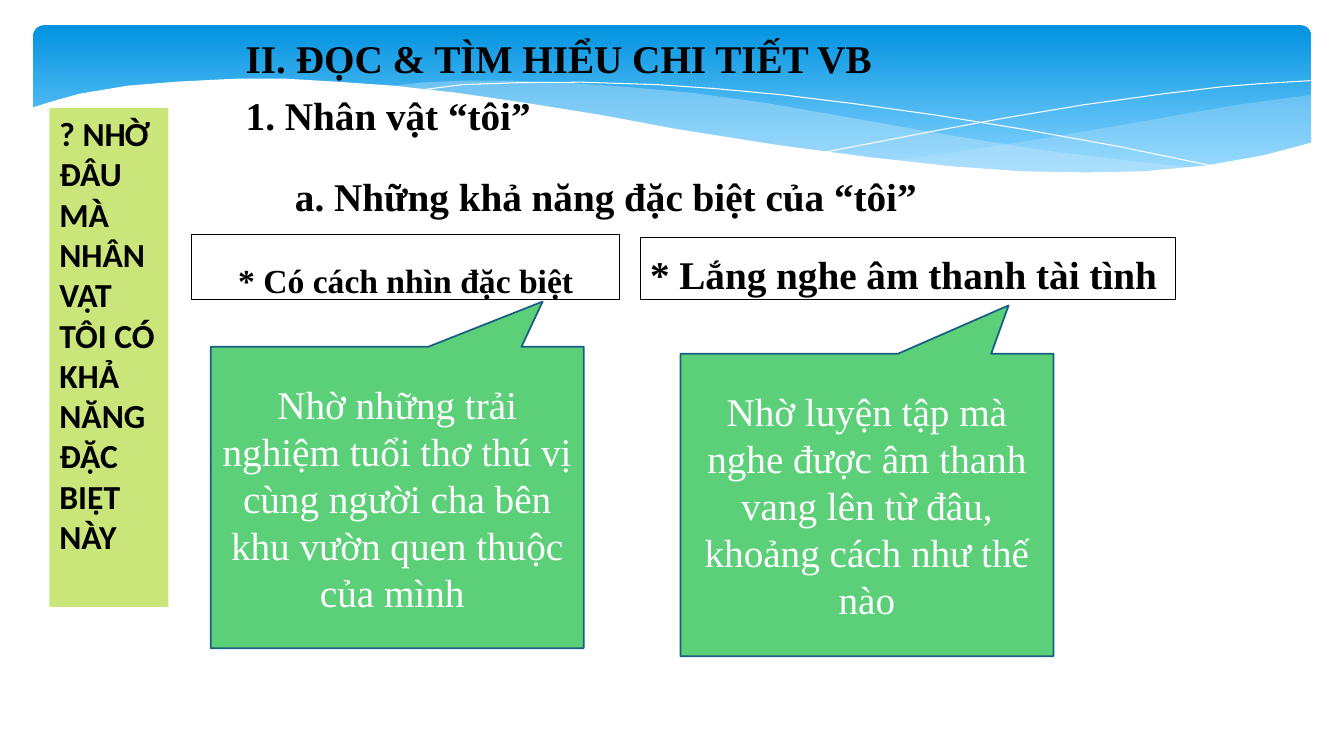
import dataclasses
import typing

import lxml.etree
import pptx
import pptx.dml.color
import pptx.enum.shapes
import pptx.enum.text
import pptx.oxml.ns
import pptx.util

SLIDE_WIDTH = pptx.util.Inches(13.333)
SLIDE_HEIGHT = pptx.util.Inches(7.5)
WHITE, BLACK = "FFFFFF", "000000"
GREEN, LIME, NAVY, PALE_BLUE = "5BD078", "CAE67B", "195F84", "C6E7FC"
SERIF = "Times New Roman"
Shapes = pptx.enum.shapes.MSO_SHAPE
Align = pptx.enum.text.PP_ALIGN
Anchor = pptx.enum.text.MSO_ANCHOR
AutoSize = pptx.enum.text.MSO_AUTO_SIZE


class Box(typing.NamedTuple):
    left: float
    top: float
    width: float
    height: float


@dataclasses.dataclass
class Wave:
    points: list[tuple[float, float]]
    fill: str | None = None
    opacity: int = 100
    line: str | None = None


@dataclasses.dataclass
class Panel:
    box: Box
    text: str
    geometry: Shapes | None = None
    adjustments: tuple[float, ...] = ()
    fill: str | None = None
    line: str | None = None
    line_width: float = 0.75
    size: int = 28
    font: str = SERIF
    colour: str = BLACK
    bold: bool = True
    align: Align = Align.LEFT
    anchor: Anchor = Anchor.TOP
    spacing: float = 1.0
    auto_size: AutoSize = AutoSize.SHAPE_TO_FIT_TEXT


HEADER = Box(2.48, 3.33, 95.1, 20.8)

WAVES = [
    Wave([(97.58, 12.53), (92.03, 13.87), (86.03, 15.73), (77.85, 18.27), (70.58, 20.27),
          (66.15, 21.33), (70.5, 22), (75.68, 22.67), (80.33, 22.93), (84.45, 22.8),
          (88.95, 22.13), (92.85, 21.07), (97.58, 18.93)], PALE_BLUE, 29),
    Wave([(89.25, 22.27), (83.7, 21.2), (77.55, 19.87), (70.58, 17.87), (62.93, 15.47),
          (56.93, 13.6), (51.45, 12.27), (46.43, 11.47), (42, 10.93), (37.95, 10.67),
          (34.43, 10.67), (31.35, 10.93), (28.65, 11.47), (34.2, 12.53), (40.43, 14.13),
          (44.93, 15.47), (52.95, 18), (60.15, 20), (66.53, 21.47), (72.23, 22.4),
          (77.25, 22.93), (81.75, 23.07), (85.73, 22.8)], PALE_BLUE, 40),
    Wave([(30.9, 12), (34.35, 11.2), (38.7, 10.93), (43.28, 10.87), (48.9, 11.2),
          (53.25, 11.73), (58.13, 12.53), (63.6, 13.73), (69.53, 15.2), (76.05, 17.07),
          (83.1, 19.33), (90.75, 22.13)], line=WHITE),
    Wave([(61.35, 20.13), (65.25, 18.8), (69.53, 17.33), (74.78, 15.6), (80.63, 13.87),
          (86.63, 12.4), (90.98, 11.47), (93.75, 11.07), (97.5, 10.67)], line=WHITE),
    Wave([(97.73, 18.8), (94.05, 20.53), (89.85, 21.87), (85.05, 22.67), (80.85, 22.8),
          (76.13, 22.67), (70.8, 22), (64.73, 20.8), (57.9, 19.2), (50.33, 17.07),
          (44.7, 15.2), (39.08, 13.6), (33.98, 12.27), (29.25, 11.33), (24.98, 10.8),
          (21.15, 10.4), (17.63, 10.4), (13.2, 10.8), (9.53, 11.33), (5.93, 12.4),
          (4.05, 13.33), (2.33, 14.27), (2.33, 29.87), (97.73, 29.87)], WHITE),
]

CALLOUT = {
    "geometry": Shapes.RECTANGULAR_CALLOUT, "fill": GREEN, "line": NAVY, "line_width": 1.25,
    "colour": WHITE, "bold": False, "align": Align.CENTER, "anchor": Anchor.MIDDLE,
    "auto_size": AutoSize.NONE,
}

PANELS = [
    Panel(Box(17.55, 3.87, 48.45, 7.6), "II. ĐỌC & TÌM HIỂU CHI TIẾT VB"),
    Panel(Box(17.55, 11.47, 45.45, 7.6), "1. Nhân vật “tôi”"),
    Panel(Box(20.48, 19.07, 52.58, 9.6), " a. Những khả năng đặc biệt của “tôi”", spacing=1.5),
    Panel(Box(47.63, 31.47, 39.83, 8.13), "* Lắng nghe âm thanh tài tình",
          Shapes.RECTANGLE, line=BLACK, align=Align.JUSTIFY, spacing=1.15),
    Panel(Box(14.25, 31.07, 31.88, 8.53), "* Có cách nhìn đặc biệt",
          Shapes.RECTANGLE, line=BLACK, size=24, align=Align.CENTER, spacing=1.5),
    Panel(Box(15.68, 45.87, 27.75, 39.87),
          "Nhờ những trải nghiệm tuổi thơ thú vị cùng người cha bên khu vườn quen thuộc của mình ",
          adjustments=(0.39, -0.65), **CALLOUT),
    Panel(Box(50.63, 46.8, 27.75, 40),
          "Nhờ luyện tập mà nghe được âm thanh vang lên từ đâu, khoảng cách như thế nào",
          adjustments=(0.38, -0.66), **CALLOUT),
    Panel(Box(3.68, 14.27, 8.85, 66), "? NHỜ ĐÂU MÀ NHÂN VẬT TÔI CÓ KHẢ NĂNG ĐẶC BIỆT NÀY",
          Shapes.RECTANGLE, fill=LIME, size=24, font="Calibri"),
]


def rgb(colour: str) -> pptx.dml.color.RGBColor:
    return pptx.dml.color.RGBColor.from_string(colour)


def place(x: float, y: float) -> tuple[int, int]:
    return round(SLIDE_WIDTH * x / 100), round(SLIDE_HEIGHT * y / 100)


def frame(box: Box) -> tuple[int, int, int, int]:
    return place(box.left, box.top) + place(box.width, box.height)


def set_attributes(target: typing.Any, values: dict[str, typing.Any]) -> None:
    for name, value in values.items():
        setattr(target, name, value)


def paint(shape: typing.Any, fill: str | None, line: str | None, width: float = 0) -> None:
    shape.shadow.inherit = False
    for form, colour in ((shape.fill, fill), (shape.line.fill, line)):
        if colour:
            form.solid()
            form.fore_color.rgb = rgb(colour)
        else:
            form.background()
    if line:
        shape.line.width = pptx.util.Pt(width)


def draw_header(slide: typing.Any, box: Box) -> None:
    shape = slide.shapes.add_shape(Shapes.ROUNDED_RECTANGLE, *frame(box))
    shape.adjustments[0] = 0.07
    paint(shape, None, None)
    shape.fill.gradient()
    shape.fill.gradient_angle = 270
    for stop, position, colour in zip(shape.fill.gradient_stops, (0, 0.9), ("0293E0", "83D3FE")):
        stop.position = position
        stop.color.rgb = rgb(colour)


def draw_wave(slide: typing.Any, wave: Wave) -> None:
    first, *others = [place(*point) for point in wave.points]
    builder = slide.shapes.build_freeform(*first)
    builder.add_line_segments(others, close=wave.fill is not None)
    shape = builder.convert_to_shape()
    paint(shape, wave.fill, wave.line)
    if wave.opacity < 100:
        qualified = pptx.oxml.ns.qn
        colour = shape.fill._xPr.find(qualified("a:solidFill")).find(qualified("a:srgbClr"))
        lxml.etree.SubElement(colour, qualified("a:alpha"), val=str(wave.opacity * 1000))


def draw_panel(slide: typing.Any, panel: Panel) -> None:
    if panel.geometry is None:
        shape = slide.shapes.add_textbox(*frame(panel.box))
    else:
        shape = slide.shapes.add_shape(panel.geometry, *frame(panel.box))
        paint(shape, panel.fill, panel.line, panel.line_width)
    for index, value in enumerate(panel.adjustments):
        shape.adjustments[index] = value
    set_attributes(shape.text_frame, {
        "word_wrap": True, "auto_size": panel.auto_size, "vertical_anchor": panel.anchor,
    })
    paragraph = shape.text_frame.paragraphs[0]
    set_attributes(paragraph, {"alignment": panel.align, "line_spacing": panel.spacing})
    run = paragraph.add_run()
    run.text = panel.text
    set_attributes(run.font, {
        "name": panel.font, "size": pptx.util.Pt(panel.size), "bold": panel.bold,
    })
    run.font.color.rgb = rgb(panel.colour)


def main() -> None:
    """Build the slide on the special abilities of the narrator."""
    presentation = pptx.Presentation()
    set_attributes(presentation, {"slide_width": SLIDE_WIDTH, "slide_height": SLIDE_HEIGHT})
    slide = presentation.slides.add_slide(presentation.slide_layouts[6])
    draw_header(slide, HEADER)
    for wave in WAVES:
        draw_wave(slide, wave)
    for panel in PANELS:
        draw_panel(slide, panel)
    presentation.save("out.pptx")


if __name__ == "__main__":
    main()
